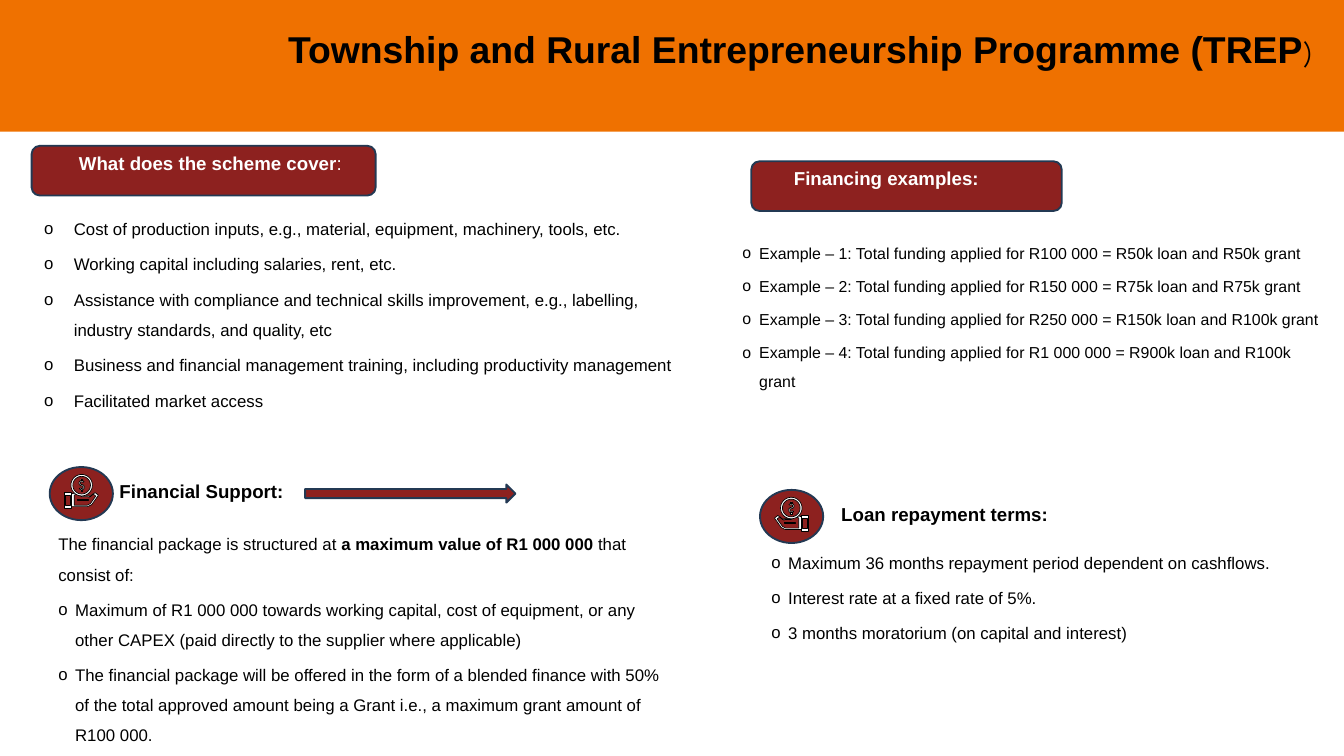
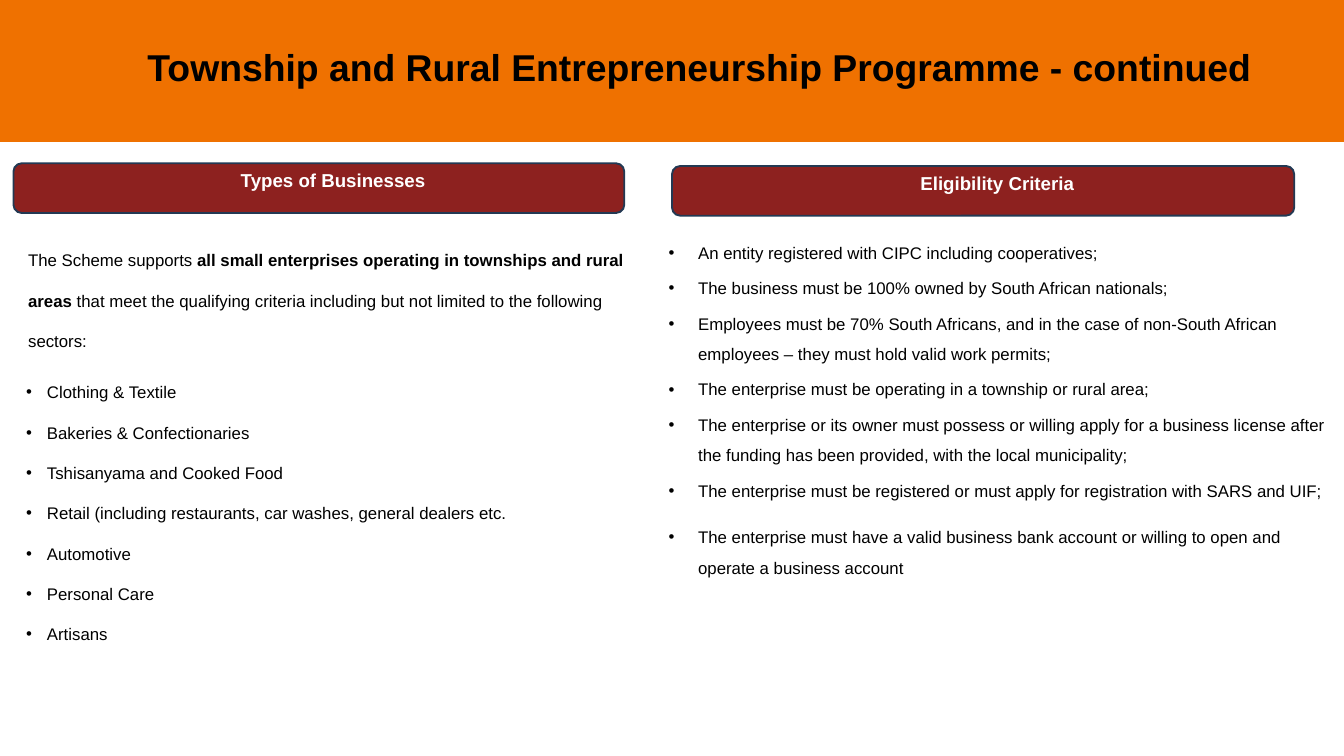
from math import cos, radians, sin

from lxml.etree import SubElement
from pptx import Presentation
from pptx.dml.color import RGBColor
from pptx.enum.shapes import MSO_SHAPE as Kind
from pptx.enum.text import MSO_ANCHOR as Anchor, MSO_AUTO_SIZE as Fit, PP_ALIGN as Align
from pptx.oxml.ns import qn
from pptx.util import Inches, Pt

ORANGE, MAROON, NAVY = "EF7100", "8D211F", "233953"
BLACK, WHITE = "000000", "FFFFFF"
FONT = "Arial"

PILL_H = 0.74
DISC_W, DISC_H = 0.94, 0.79
ICON = 0.51

# List styles: close and wide hanging indents
NEAR = {"left": 0.75, "hang": 0.25, "lead": 1.5, "before": 5}
WIDE = {"left": 1, "hang": 0.44, "lead": 1.5, "before": 5.6}

COVER = [
    "Cost of production inputs, e.g., material, equipment, machinery, tools, etc.",
    "Working capital including salaries, rent, etc.",
    "Assistance with compliance and technical skills improvement, e.g., labelling, "
    "industry standards, and quality, etc",
    "Business and financial management training, including productivity management",
    "Facilitated market access",
]
SUPPORT = ("The financial package is structured at **a maximum value of R1 000 000 **"
           "that consist of:")
PACKAGE = [
    "Maximum of R1 000 000 towards working capital, cost of equipment, or any other CAPEX "
    "(paid directly to the supplier where applicable)",
    "The financial package will be offered in the form of a blended finance with 50% of the "
    "total approved amount being a Grant i.e., a maximum grant amount of R100 000.",
]
DEALS = [("R100 000", "R50k", "R50k"), ("R150 000", "R75k", "R75k"),
         ("R250 000", "R150k", "R100k"), ("R1 000 000", "R900k", "R100k")]
TERMS = [
    "Maximum 36 months repayment period dependent on cashflows.",
    "Interest rate at a fixed rate of 5%.",
    "3 months moratorium (on capital and interest)",
]
SCOPE = ("The Scheme supports **all small enterprises operating in townships and rural areas **"
         "that meet the qualifying criteria including but not limited to the following sectors:")
SECTORS = ["Clothing & Textile", "Bakeries & Confectionaries", "Tshisanyama and Cooked Food",
           "Retail (including restaurants, car washes, general dealers etc.", "Automotive",
           "Personal Care", "Artisans"]
RULES = [
    "An entity registered with CIPC including cooperatives;",
    "The business must be 100% owned by South African nationals;",
    "Employees must be 70% South Africans, and in the case of non-South African employees – "
    "they must hold valid work permits;",
    "The enterprise must be operating in a township or rural area;",
    "The enterprise or its owner must possess or willing apply for a business license after "
    "the funding has been provided, with the local municipality;",
    "The enterprise must be registered or must apply for registration with SARS and UIF;",
]
BANK = ("The enterprise must have a valid business bank account or willing to open and "
        "operate a business account")


def tint(code):
    return RGBColor.from_string(code)


def write(para, text, size=18, color=BLACK, bold=False, left=0, hang=0, mark=None,
          lead=None, before=0, after=0):
    """Fill a paragraph; text between ** marks is bold."""
    for i, part in enumerate(text.split("**")):
        if part:
            run = para.add_run()
            run.text = part
            if i % 2:
                run.font.bold = True
    para.line_spacing = lead
    para.space_before, para.space_after = Pt(before), Pt(after)
    props = para._p.get_or_add_pPr()
    props.set("marL", str(Inches(left)))
    props.set("indent", str(Inches(-hang)))
    if mark:
        hue = SubElement(props, qn("a:buClr"))
        SubElement(hue, qn("a:srgbClr")).set("val", BLACK)
        SubElement(props, qn("a:buFont")).set("typeface", FONT)
        SubElement(props, qn("a:buChar")).set("char", mark)
    font = para.font
    font.name, font.size, font.bold = FONT, Pt(size), bold
    font.color.rgb = tint(color)


def items(texts, **opts):
    """Pair each text with the same paragraph options."""
    return [(text, opts) for text in texts]


def add_text(slide, box, pairs):
    frame = slide.shapes.add_textbox(*map(Inches, box)).text_frame
    frame.word_wrap = True
    for i, (text, opts) in enumerate(pairs):
        if i:
            write(frame.add_paragraph(), text, **opts)
        else:
            write(frame.paragraphs[0], text, **{**opts, "before": 0})


def paint(shape, fill, line=None, width=0):
    shape.shadow.inherit = False
    shape.fill.solid()
    shape.fill.fore_color.rgb = tint(fill)
    if line:
        shape.line.color.rgb = tint(line)
        shape.line.width = Pt(width)
    else:
        shape.line.fill.background()


def add_shape(slide, kind, box):
    shape = slide.shapes.add_shape(kind, *map(Inches, box))
    paint(shape, MAROON, NAVY, 2)
    return shape


def add_head(slide, text, box, depth):
    """Place the title over an orange band of the given depth."""
    title = slide.shapes.title
    band = slide.shapes.add_shape(Kind.RECTANGLE, 0, 0, Inches(20), Inches(depth))
    paint(band, ORANGE)
    title.element.addprevious(band.element)
    title.left, title.top, title.width, title.height = map(Inches, box)
    frame = title.text_frame
    frame.auto_size, frame.vertical_anchor = Fit.NONE, Anchor.MIDDLE
    para = frame.paragraphs[0]
    write(para, text, 40, bold=True)
    para.alignment = Align.RIGHT
    return para


def add_pill(slide, text, left, top, width, indent=0.5, align=Align.LEFT):
    pill = add_shape(slide, Kind.ROUNDED_RECTANGLE, (left, top, width, PILL_H))
    frame = pill.text_frame
    frame.vertical_anchor, frame.margin_top = Anchor.TOP, Inches(0.05)
    para = frame.paragraphs[0]
    write(para, text, 20, WHITE, left=indent)
    para.alignment = align


def arc(x, y, radius, start, end):
    """Points along an arc, from one angle to another in steps of 10."""
    step = 10 if end > start else -10
    return [(x + radius * cos(radians(a)), y + radius * sin(radians(a)))
            for a in range(start, end + step, step)]


def block(x, y, wide, high):
    return [(x, y), (x + wide, y), (x + wide, y + high), (x, y + high)]


def shrink(loop, scale):
    """The same loop, drawn smaller about the middle of its extent."""
    mids = [(min(axis) + max(axis)) / 2 for axis in zip(*loop)]
    return [tuple(m + scale * (p - m) for p, m in zip(point, mids)) for point in loop]


def trace(slide, left, top, flip, loops):
    """Draw loops as one outline, where a loop inside another cuts a hole."""
    placed = [[(Inches(left + (ICON - x if flip else x)), Inches(top + y)) for x, y in loop]
              for loop in loops]
    pen = slide.shapes.build_freeform(*placed[0][0])
    for loop in placed:
        pen.move_to(*loop[0])
        pen.add_line_segments(loop[1:], close=True)
    paint(pen.convert_to_shape(), WHITE, BLACK, 0.75)


def add_icon(slide, left, top, flip):
    """A hand holding a coin; flip turns it to the other side."""
    mid, wide = 0.26, 0.02
    cuff = block(0, 0.27, 0.11, ICON - 0.27)
    palm = [(0.11, 0.29), (0.18, 0.27), (0.25, 0.32), (0.36, 0.32), (0.39, 0.33),
            (0.46, 0.27), (ICON, 0.31), (0.41, 0.45), (0.35, 0.48), (0.11, 0.48)]
    thumb = block(0.2, 0.37, 0.16, wide)
    trace(slide, left, top, flip,
          [cuff, shrink(cuff, 0.6), palm, shrink(palm, 0.8), thumb])

    ring = arc(mid, 0.16, 0.16, 0, 350)
    trace(slide, left, top, flip, [ring, shrink(ring, 0.82)])

    # The sign is two bowls that meet in the middle, with a tick at each end
    bowl, high, low = 0.03, 0.13, 0.19
    thin, thick = bowl - wide / 2, bowl + wide / 2
    curve = (arc(mid, high, thick, -30, -270) + arc(mid, low, thin, -90, 150)
             + arc(mid, low, thick, 150, -90) + arc(mid, high, thin, -270, -30))
    ticks = [block(mid - wide / 2, y, wide, wide) for y in (high - thick - wide, low + thick)]
    trace(slide, left, top, flip, [curve, *ticks])


def add_badge(slide, text, left, top, gap, flip=False):
    """Icon in a disc, with its heading after a gap."""
    add_shape(slide, Kind.OVAL, (left, top, DISC_W, DISC_H))
    add_icon(slide, left + (DISC_W - ICON) / 2, top + 0.11, flip)
    add_text(slide, (left + DISC_W + gap, top + 0.14, 3.96, 0.42),
             items([text], size=20, bold=True))


def add_cover(slide, left, top):
    add_pill(slide, "**What does the scheme cover**:", left + 0.47, top, 5.12, 0.57)
    add_text(slide, (left, top + 0.88, 10.45, 3.17), items(COVER, mark="o", **WIDE))


def add_support(slide, left, top):
    add_badge(slide, "Financial Support:", left + 0.47, top, 0)
    add_shape(slide, Kind.RIGHT_ARROW, (left + 4.27, top + 0.26, 3.13, 0.27))
    add_text(slide, (left, top + 0.8, 9.76, 3.5),
             items([SUPPORT], left=0.5, lead=1.5) + items(PACKAGE, mark="o", **NEAR))


def add_deals(slide, left, top):
    deals = [f"Example – {i}: Total funding applied for {total} = {loan} loan and {grant} grant"
             for i, (total, loan, grant) in enumerate(DEALS, 1)]
    add_pill(slide, "**Financing examples:**", left + 0.73, top, 4.62)
    add_text(slide, (left, top + 1.03, 9.43, 2.51), items(deals, size=17, mark="o", **NEAR))


def add_terms(slide, left, top):
    add_badge(slide, "Loan repayment terms:", left + 0.43, top, 0.17, flip=True)
    add_text(slide, (left, top + 0.74, 8.24, 2.51), items(TERMS, mark="o", **NEAR))


def add_sectors(slide, left, top):
    add_pill(slide, "**Types of Businesses **", left, top, 9.09, align=Align.CENTER)
    add_text(slide, (left + 0.09, top + 0.94, 9.39, 6.23),
             items([SCOPE], left=0.03, lead=2, after=12)
             + items(SECTORS, mark="•", left=0.31, hang=0.31, lead=2))


def add_rules(slide, left, top):
    add_pill(slide, "**Eligibility Criteria **", left, top, 9.26, align=Align.CENTER)
    last = {**WIDE, "before": WIDE["before"] + 12}
    add_text(slide, (left - 0.71, top + 0.94, 10.58, 5.26),
             items(RULES, mark="•", **WIDE) + items([BANK], mark="•", **last))


def add_scheme(slide):
    title = add_head(slide, "Township and Rural Entrepreneurship Programme (TREP",
                     (0.9, 0, 18.83, 1.45), 1.96)
    tail = title.add_run()
    tail.text = ") "
    tail.font.name, tail.font.size, tail.font.bold = "Manrope", Pt(28), False
    add_cover(slide, 0, 2.17)
    add_support(slide, 0.27, 6.95)
    add_deals(slide, 10.45, 2.4)
    add_terms(slide, 10.88, 7.29)


def add_access(slide):
    add_head(slide, "Township and Rural Entrepreneurship Programme - continued",
             (0.29, 0.27, 18.43, 1.45), 2.11)
    add_sectors(slide, 0.2, 2.43)
    add_rules(slide, 10, 2.47)


def main():
    deck = Presentation()
    deck.slide_width, deck.slide_height = Inches(20), Inches(11.25)
    for build in (add_scheme, add_access):
        build(deck.slides.add_slide(deck.slide_layouts[5]))
    deck.save("out.pptx")


if __name__ == "__main__":
    main()
